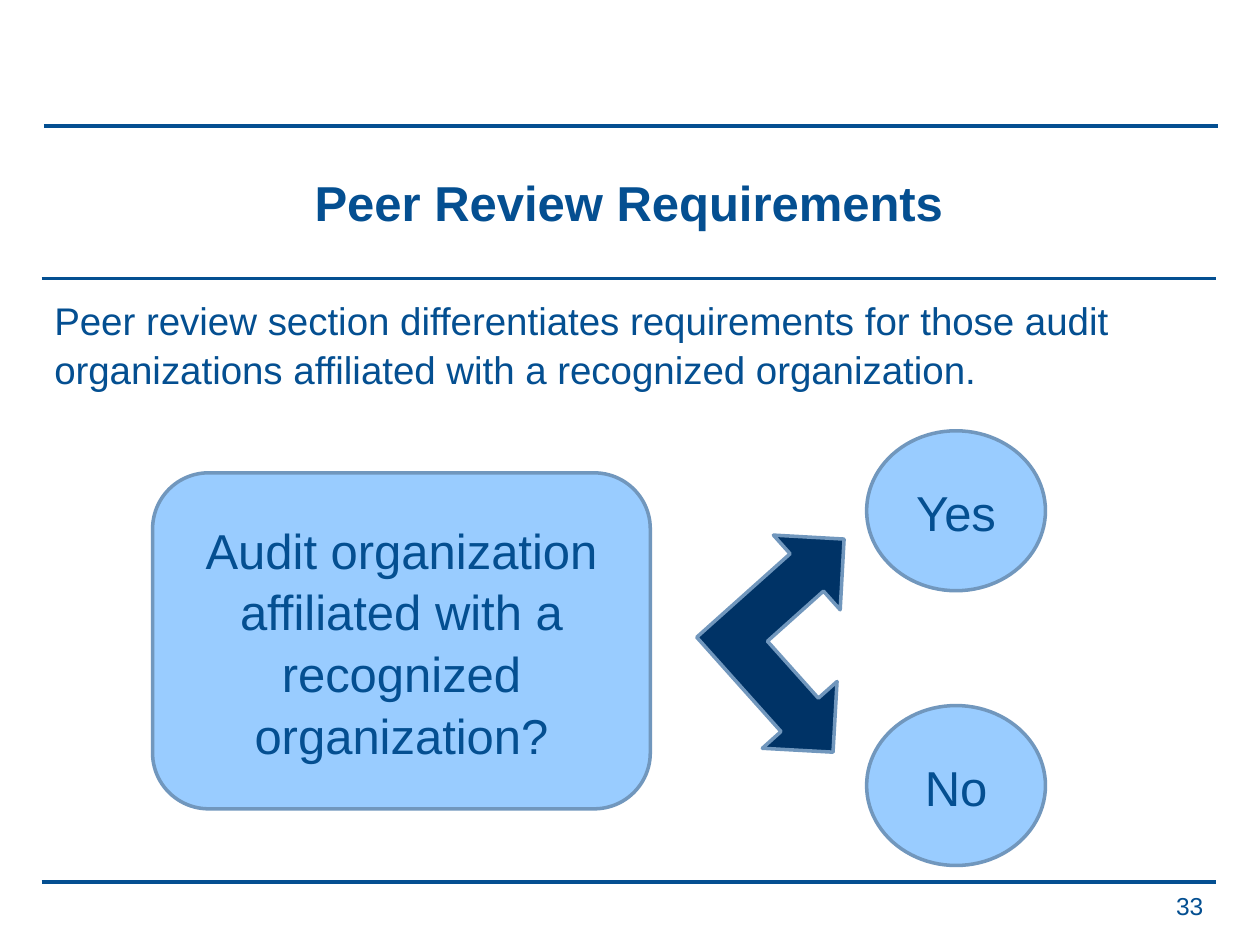
from pptx import Presentation
from pptx.dml.color import RGBColor
from pptx.enum.shapes import MSO_CONNECTOR, MSO_SHAPE
from pptx.enum.text import MSO_ANCHOR, MSO_AUTO_SIZE, PP_ALIGN
from pptx.oxml.ns import qn
from pptx.util import Pt
from lxml import etree

LEFT, CENTER, RIGHT = PP_ALIGN.LEFT, PP_ALIGN.CENTER, PP_ALIGN.RIGHT
TOP, MIDDLE = MSO_ANCHOR.TOP, MSO_ANCHOR.MIDDLE
ROUND, OVAL, FORK = MSO_SHAPE.ROUNDED_RECTANGLE, MSO_SHAPE.OVAL, MSO_SHAPE.LEFT_UP_ARROW
BLUE, PALE, NAVY, EDGE = "044F91", "99CCFF", "003366", "7197BD"


def color(code):
    return RGBColor.from_string(code)


def place(shape, box):
    shape.left, shape.top, shape.width, shape.height = map(Pt, box)


def write(shape, text, size, align=CENTER, anchor=MIDDLE, bold=False):
    frame = shape.text_frame
    frame.word_wrap = True
    frame.auto_size = MSO_AUTO_SIZE.NONE
    frame.vertical_anchor = anchor
    frame.text = text
    para = frame.paragraphs[0]
    para.alignment = align
    para.line_spacing = 1.05
    para.space_before = Pt(0)
    font = para.font
    font.name, font.size, font.bold = "Arial", Pt(size), bold
    font.color.rgb = color(BLUE)
    return para


def add_rule(slide, left, top, width, weight):
    rule = slide.shapes.add_connector(
        MSO_CONNECTOR.STRAIGHT, Pt(left), Pt(top), Pt(left + width), Pt(top))
    rule.line.color.rgb = color(BLUE)
    rule.line.width = Pt(weight)
    etree.SubElement(rule._element.spPr, qn("a:effectLst"))


def add_node(slide, kind, box, fill, text=""):
    node = slide.shapes.add_shape(kind, *map(Pt, box))
    node.shadow.inherit = False
    node.fill.solid()
    node.fill.fore_color.rgb = color(fill)
    node.line.color.rgb = color(EDGE)
    node.line.width = Pt(2)
    if text:
        write(node, text, 28)
    return node


def add_frame(slide, left, width):
    add_rule(slide, left + 1.3, 72, width, 2.5)
    add_rule(slide, left, 504, width, 2.5)
    add_rule(slide, left, 159, width, 1.5)


def add_title(slide, box):
    title = slide.shapes.title
    place(title, box)
    write(title, "Peer Review Requirements", 28, bold=True)


def add_body(slide, box):
    body = slide.placeholders[1]
    place(body, box)
    para = write(
        body, "Peer review section differentiates requirements for those audit "
        "organizations affiliated with a recognized organization.", 22, LEFT, TOP)
    props = para._p.get_or_add_pPr()
    props.set("marL", "0")
    props.set("indent", "0")
    mark = etree.Element(qn("a:buNone"))
    props.find(qn("a:defRPr")).addprevious(mark)


def add_number(slide, box):
    number = slide.shapes.add_textbox(*map(Pt, box))
    write(number, "33", 14, RIGHT)


def add_choice(slide, left, top):
    add_node(slide, ROUND, (left, top + 24, 284.4, 192), PALE,
             "Audit organization affiliated with a recognized organization?")
    for row, text in enumerate(("Yes", "No")):
        add_node(slide, OVAL, (left + 408, top + row * 157, 102.2, 91.4), PALE, text)
    fork = add_node(slide, FORK, (left + 314.5, top + 64, 114.5, 115.2), NAVY)
    fork.rotation = 138.2


def main():
    deck = Presentation()
    deck.slide_width, deck.slide_height = Pt(720), Pt(540)
    slide = deck.slides.add_slide(deck.slide_layouts[1])
    left, width = 23.8, 671
    add_frame(slide, left, width)
    add_title(slide, (left, 78.5, width, 72))
    add_body(slide, (left, 165, width, 332.6))
    add_number(slide, (527, 504.7, 167.8, 25.2))
    add_choice(slide, 87.2, 246.2)
    deck.save("out.pptx")


if __name__ == "__main__":
    main()
